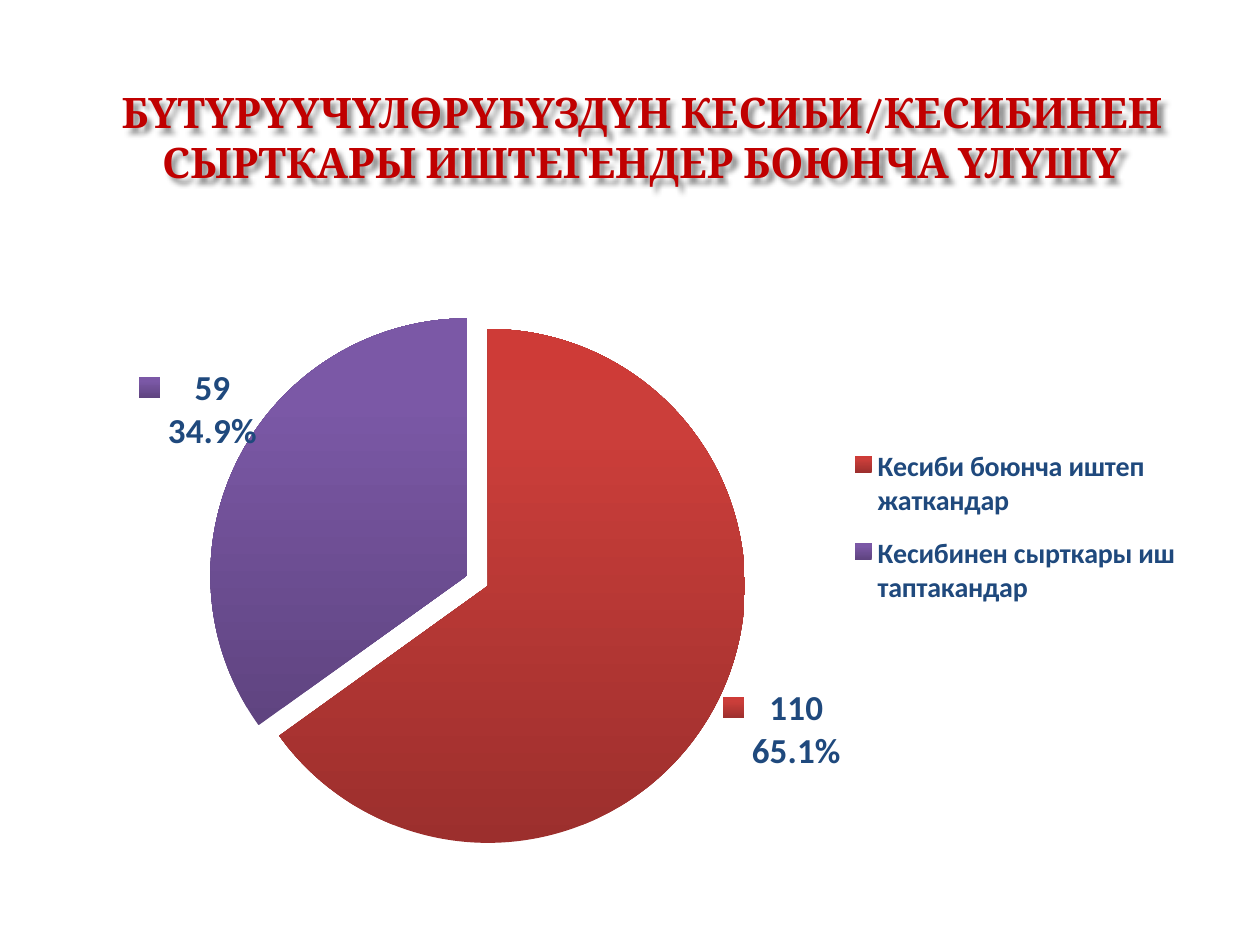
from copy import deepcopy

from pptx import Presentation
from pptx.chart.data import CategoryChartData
from pptx.dml.color import RGBColor
from pptx.enum.chart import XL_CHART_TYPE, XL_LABEL_POSITION, XL_LEGEND_POSITION
from pptx.enum.text import MSO_ANCHOR, PP_ALIGN
from pptx.oxml import parse_xml
from pptx.oxml.ns import nsdecls, qn
from pptx.util import Pt

PX = 914400 / 126
COLORS = {
    "title": "C00000",
    "text": "1F497D",
    "shadow": "000000",
    "working": ("9C2F2D", "CB3E3A", "CE3B37"),
    "other": ("5F4480", "7B58A6", "7C57A8"),
}
TITLE = "БҮТҮРҮҮЧҮЛӨРҮБҮЗДҮН КЕСИБИ/КЕСИБИНЕН СЫРТКАРЫ ИШТЕГЕНДЕР БОЮНЧА ҮЛҮШҮ"
# label, value, gradient, explosion in percent of the radius, label shift in px
SLICES = [
    ("Кесиби боюнча иштеп жаткандар", 110, "working", 0, (0, -20)),
    ("Кесибинен сырткары иш таптакандар", 59, "other", 9, (25, -2)),
]


def px(length):
    return round(length * PX)


def set_font(font, name, size, color):
    font.name = name
    font.size = Pt(size)
    font.bold = True
    font.color.rgb = RGBColor.from_string(COLORS[color])


def add_title(page, box):
    title = page.shapes.title
    title.left, title.top, title.width, title.height = map(px, box)
    title.fill.background()
    title._element.spPr.append(parse_xml(
        f'<a:effectLst {nsdecls("a")}>'
        '<a:outerShdw blurRad="38100" dist="38100" dir="2700000" algn="tl">'
        f'<a:srgbClr val="{COLORS["shadow"]}"><a:alpha val="43000"/></a:srgbClr>'
        '</a:outerShdw></a:effectLst>'))
    frame = title.text_frame
    frame.margin_left = frame.margin_right = px(15)
    frame.margin_top = frame.margin_bottom = px(8)
    frame.vertical_anchor = MSO_ANCHOR.MIDDLE
    frame.word_wrap = True
    para = frame.paragraphs[0]
    para.text = TITLE
    para.alignment = PP_ALIGN.CENTER
    set_font(para.font, "Cambria", 24, "title")


def make_layout(box, area, head=""):
    """Manual layout for an area (px within the chart box): x, y and maybe size."""
    values = "".join(
        f'<c:{tag} val="{round(length / whole, 4)}"/>'
        for tag, length, whole in zip("xywh", area, box[2:] * 2))
    return parse_xml(
        f'<c:layout {nsdecls("c")}><c:manualLayout>{head}{values}'
        '</c:manualLayout></c:layout>')


def set_layout(element, position, box, area, target=""):
    """Fix a chart part at area, with the layout as child number position."""
    for old in element.findall(qn("c:layout")):
        element.remove(old)
    modes = '<c:xMode val="edge"/><c:yMode val="edge"/>'
    element.insert(position, make_layout(box, area, target + modes))


def style_slice(series, index, gradient, explosion):
    stops = "".join(
        f'<a:gs pos="{place * 1000}"><a:srgbClr val="{color}"/></a:gs>'
        for place, color in zip((0, 80, 100), COLORS[gradient]))
    series._element.find(qn("c:cat")).addprevious(parse_xml(
        f'<c:dPt {nsdecls("c", "a")}><c:idx val="{index}"/><c:bubble3D val="0"/>'
        f'<c:explosion val="{explosion}"/><c:spPr><a:gradFill><a:gsLst>{stops}</a:gsLst>'
        '<a:lin ang="16200000" scaled="0"/></a:gradFill><a:ln><a:noFill/></a:ln>'
        '</c:spPr></c:dPt>'))


def add_labels(series, box):
    """Label every slice alike, then shift each label by its own offset."""
    labels = series.data_labels
    labels.show_value = labels.show_percentage = labels.show_legend_key = True
    labels.number_format = "0.0%"
    labels.number_format_is_linked = False
    labels.position = XL_LABEL_POSITION.OUTSIDE_END
    set_font(labels.font, "Calibri", 20, "text")
    element = labels._element
    element.find(qn("c:showBubbleSize")).addnext(
        parse_xml(f'<c:separator {nsdecls("c")}>\n</c:separator>'))
    shared = [child for child in element if child.tag != qn("c:showLeaderLines")]
    for index, (*_, shift) in enumerate(SLICES):
        label = parse_xml(f'<c:dLbl {nsdecls("c")}><c:idx val="{index}"/></c:dLbl>')
        label.append(make_layout(box, shift))
        label.extend([deepcopy(child) for child in shared])
        element.insert(index, label)


def add_pie(page, box):
    data = CategoryChartData()
    data.categories = [label for label, *_ in SLICES]
    data.add_series("Series 1", [value for _, value, *_ in SLICES])
    chart = page.shapes.add_chart(XL_CHART_TYPE.PIE, *map(px, box), data).chart
    chart.has_title = False
    set_font(chart.font, "Calibri", 32, "text")

    plot = chart.plots[0]
    plot.vary_by_categories = True
    series = plot.series[0]
    for index, (_, _, gradient, explosion, _) in enumerate(SLICES):
        style_slice(series, index, gradient, explosion)
    add_labels(series, box)

    chart.has_legend = True
    legend = chart.legend
    legend.position = XL_LEGEND_POSITION.RIGHT
    legend.include_in_layout = False
    set_font(legend.font, "Calibri", 16, "text")
    set_layout(chart._chartSpace.chart.plotArea, 0, box, (159, 64, 514, 514),
               '<c:layoutTarget val="inner"/>')
    set_layout(legend._element, 1, box, (761, 167, 364, 192))


def main():
    deck = Presentation()
    deck.slide_width, deck.slide_height = px(1260), px(945)
    page = deck.slides.add_slide(deck.slide_layouts[5])
    add_title(page, (63, 38, 1158, 198))
    add_pie(page, (72, 265, 1152, 627))
    deck.save("out.pptx")


if __name__ == "__main__":
    main()
